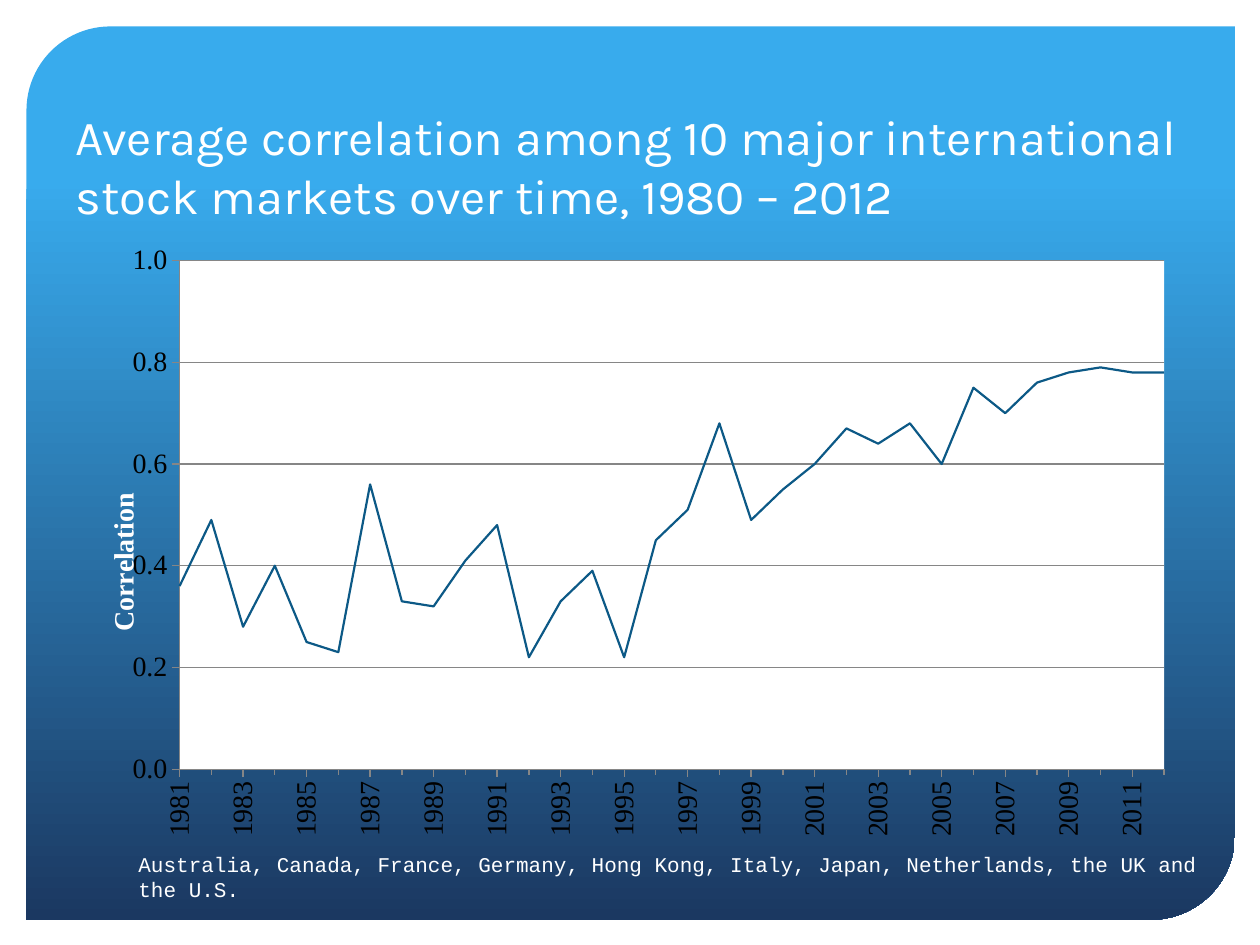
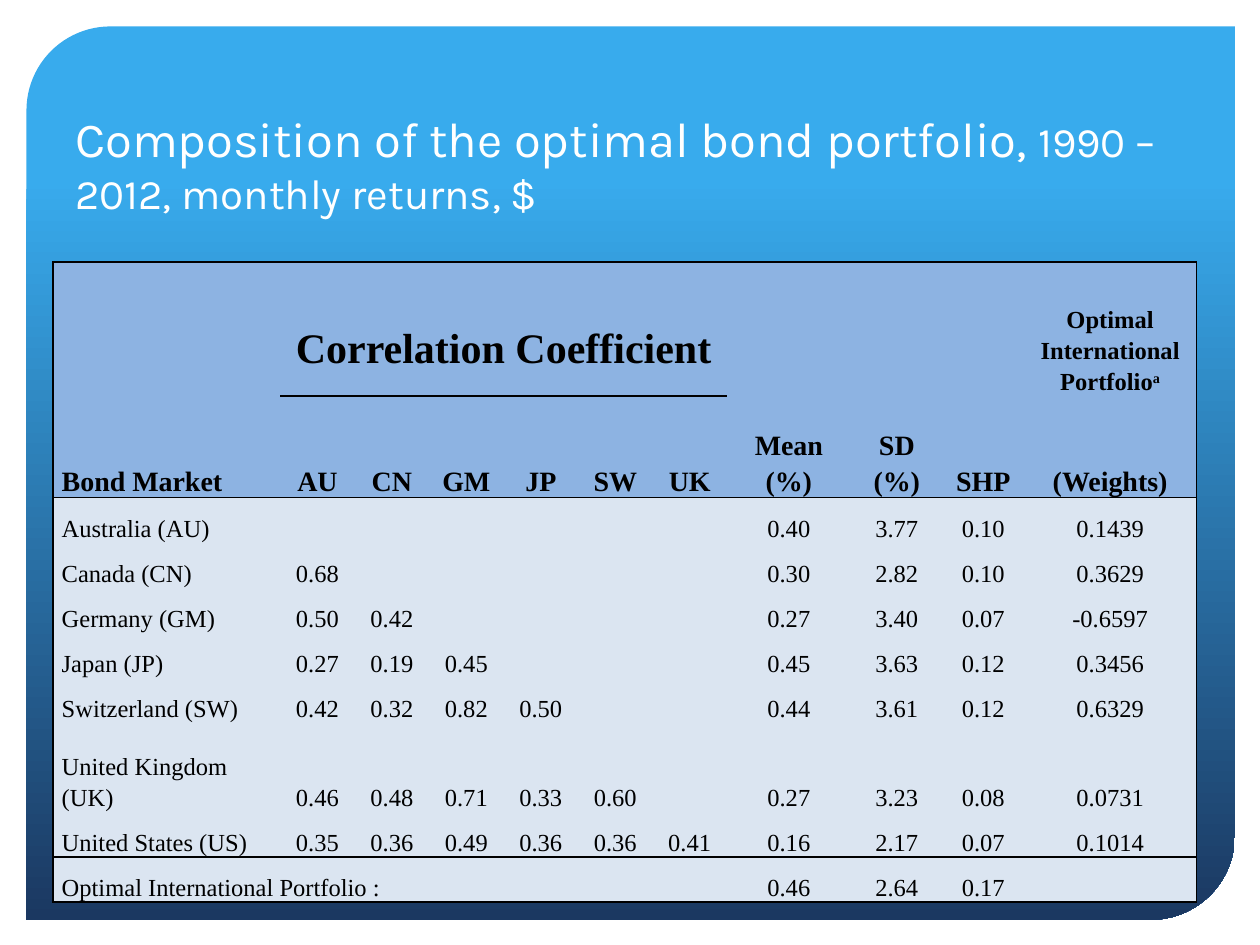
from lxml.etree import SubElement
from pptx import Presentation
from pptx.chart.data import XyChartData
from pptx.dml.color import RGBColor
from pptx.enum.chart import XL_CHART_TYPE, XL_TICK_MARK
from pptx.enum.shapes import MSO_SHAPE
from pptx.enum.text import MSO_ANCHOR, PP_ALIGN
from pptx.oxml.ns import qn
from pptx.util import Inches, Pt

SLIDE_WIDTH, SLIDE_HEIGHT = Inches(10), Inches(7.5)
COLUMNS, ROWS = 100, 75

WHITE, BLACK = "FFFFFF", "000000"
SKY, NAVY = "38ABED", "1B3861"
CURVE, GRID = "0C5986", "868686"
HEADER_FILL, BODY_FILL = "8DB3E2", "DBE5F1"
TITLE_FONT, NOTE_FONT, DATA_FONT = "Karla", "Courier New", "Times New Roman"

FIRST_YEAR, LAST_YEAR = 1981, 2012
CORRELATIONS = [
    0.36, 0.49, 0.28, 0.4, 0.25, 0.23, 0.56, 0.33, 0.32, 0.41, 0.48,
    0.22, 0.33, 0.39, 0.22, 0.45, 0.51, 0.68, 0.49, 0.55, 0.6, 0.67,
    0.64, 0.68, 0.6, 0.75, 0.7, 0.76, 0.78, 0.79, 0.78, 0.78,
]

COLUMN_SHARES = [1.8] + [0.59] * 6 + [0.98, 0.73, 0.64, 1.37]
ROW_SHARES = [1.07, 0.81] + [0.36] * 5 + [0.71, 0.36, 0.36]
COLUMN_HEADS = ["Bond Market", "AU", "CN", "GM", "JP", "SW", "UK",
                "Mean (%)", "SD (%)", "SHP", "(Weights)"]
# Market, correlations with the markets above it, then mean, SD, SHP and weight
MARKETS = [
    ("Australia (AU)", "", "0.40 3.77 0.10 0.1439"),
    ("Canada (CN)", "0.68", "0.30 2.82 0.10 0.3629"),
    ("Germany (GM)", "0.50 0.42", "0.27 3.40 0.07 -0.6597"),
    ("Japan (JP)", "0.27 0.19 0.45", "0.45 3.63 0.12 0.3456"),
    ("Switzerland (SW)", "0.42 0.32 0.82 0.50", "0.44 3.61 0.12 0.6329"),
    ("United Kingdom (UK)", "0.46 0.48 0.71 0.33 0.60", "0.27 3.23 0.08 0.0731"),
    ("United States (US)", "0.35 0.36 0.49 0.36 0.36 0.41", "0.16 2.17 0.07 0.1014"),
    ("Optimal International Portfolio :", "", "0.46 2.64 0.17"),
]


def rgb(color):
    return RGBColor.from_string(color)


def grid_box(column, row, width, height):
    """Turn grid columns and rows into a left, top, width, height box."""
    across, down = SLIDE_WIDTH / COLUMNS, SLIDE_HEIGHT / ROWS
    return [round(n * unit) for n, unit in
            zip((column, row, width, height), (across, down, across, down))]


def style(font, name, size, color, bold=False):
    font.name, font.size, font.bold = name, Pt(size), bold
    font.color.rgb = rgb(color)


def add_backdrop(slide, box):
    panel = slide.shapes.add_shape(MSO_SHAPE.ROUND_2_DIAG_RECTANGLE, *box)
    panel.adjustments[0], panel.adjustments[1] = 0.094, 0
    panel.shadow.inherit = False
    panel.line.fill.background()
    panel.fill.gradient()
    panel.fill.gradient_angle = 270
    for stop, color, position in zip(panel.fill.gradient_stops, (SKY, NAVY), (0.17, 1)):
        stop.color.rgb, stop.position = rgb(color), position


def add_words(slide, box, pieces, font_name, anchor):
    """Add one white paragraph made of (text, size) pieces."""
    frame = slide.shapes.add_textbox(*box).text_frame
    frame.word_wrap, frame.vertical_anchor = True, anchor
    for text, size in pieces:
        run = frame.paragraphs[0].add_run()
        run.text = text
        style(run.font, font_name, size, WHITE)


def start_slide(deck, title_box, title_pieces):
    slide = deck.slides.add_slide(deck.slide_layouts[6])
    add_backdrop(slide, grid_box(2.1, 2.1, 95.9, 70.9))
    add_words(slide, title_box, title_pieces, TITLE_FONT, MSO_ANCHOR.BOTTOM)
    return slide


def set_layout(parent, **settings):
    layout = parent.find(qn("c:layout"))
    if layout is None:
        layout = parent.makeelement(qn("c:layout"))
        parent.insert(0, layout)
    manual = SubElement(layout, qn("c:manualLayout"))
    for key, value in settings.items():
        SubElement(manual, qn(f"c:{key}"), val=str(value))


def turn_upright(body):
    body.set("rot", "-5400000")
    body.set("vert", "horz")


def format_axis(axis, low, high, step, number_format):
    axis.minimum_scale, axis.maximum_scale, axis.major_unit = low, high, step
    axis.major_tick_mark = XL_TICK_MARK.OUTSIDE
    axis.format.line.color.rgb = rgb(GRID)
    axis.tick_labels.number_format = number_format
    axis.tick_labels.number_format_is_linked = False
    style(axis.tick_labels.font, DATA_FONT, 16, BLACK)


def add_correlation_chart(slide, box):
    data = XyChartData()
    series_data = data.add_series("Series 1")
    for year, correlation in enumerate(CORRELATIONS, FIRST_YEAR):
        series_data.add_data_point(year, correlation)
    chart = slide.shapes.add_chart(
        XL_CHART_TYPE.XY_SCATTER_LINES_NO_MARKERS, *box, data).chart
    chart.has_title = chart.has_legend = False
    style(chart.font, DATA_FONT, 16, BLACK)
    chart.plots[0].vary_by_categories = False

    curve = chart.plots[0].series[0]
    curve.smooth = False
    curve.format.line.width = Pt(1.25)
    curve.format.line.color.rgb = rgb(CURVE)

    years, levels = chart.category_axis, chart.value_axis
    format_axis(years, FIRST_YEAR, LAST_YEAR, 2, "0")
    years.has_major_gridlines = False
    years.minor_unit, years.minor_tick_mark = 1, XL_TICK_MARK.OUTSIDE
    turn_upright(years.tick_labels.font._element.getroottree().find(
        f".//{qn('c:valAx')}/{qn('c:txPr')}/{qn('a:bodyPr')}"))
    format_axis(levels, 0, 1, 0.2, "0.0")
    levels.minor_tick_mark = XL_TICK_MARK.NONE
    levels.has_major_gridlines = True
    levels.major_gridlines.format.line.color.rgb = rgb(GRID)

    heading = levels.axis_title.text_frame
    heading.text = "Correlation"
    style(heading.paragraphs[0].runs[0].font, DATA_FONT, 16, WHITE, True)
    turn_upright(heading._txBody.find(qn("a:bodyPr")))
    set_layout(levels.axis_title._element, xMode="edge", yMode="edge", x=0.02, y=0.42)

    plot_area = chart._chartSpace.find(f".//{qn('c:plotArea')}")
    set_layout(plot_area, layoutTarget="inner", xMode="edge", yMode="edge",
               x=0.092, y=0.049, w=0.893, h=0.829)
    backing = SubElement(SubElement(plot_area, qn("c:spPr")), qn("a:solidFill"))
    SubElement(backing, qn("a:srgbClr"), val=WHITE)


def rule_cell(cell, ruled_sides):
    """Draw a black border on the named sides and none on the others."""
    properties = cell._tc.get_or_add_tcPr()
    for side in "LRTB":
        edge = SubElement(properties, qn(f"a:ln{side}"), w=str(Pt(1)))
        if side in ruled_sides:
            SubElement(SubElement(edge, qn("a:solidFill")), qn("a:srgbClr"), val=BLACK)
        else:
            SubElement(edge, qn("a:noFill"))


def ruled_sides(row, column):
    last_row, last_column = len(ROW_SHARES) - 1, len(COLUMN_SHARES) - 1
    under_heading = 1 <= column <= 6
    tests = {
        "L": column == 0,
        "R": column == last_column,
        "T": row in (0, 2, last_row) or (row == 1 and under_heading),
        "B": row in (1, last_row - 1, last_row) or (row == 0 and under_heading),
    }
    return [side for side, ruled in tests.items() if ruled]


def write_cell(cell, text, size, bold=False, align=PP_ALIGN.CENTER):
    cell.text = text
    paragraph = cell.text_frame.paragraphs[0]
    paragraph.alignment, paragraph.line_spacing = align, 1.15
    for run in paragraph.runs:
        style(run.font, DATA_FONT, size, BLACK, bold)
    return paragraph


def add_bond_table(slide, box):
    left, top, width, height = box
    table = slide.shapes.add_table(len(ROW_SHARES), len(COLUMN_SHARES), *box).table
    table.first_row = table.horz_banding = False
    for column, share in zip(table.columns, COLUMN_SHARES):
        column.width = round(width * share / sum(COLUMN_SHARES))
    for row, share in zip(table.rows, ROW_SHARES):
        row.height = round(height * share / sum(ROW_SHARES))

    for r in range(len(ROW_SHARES)):
        for c in range(len(COLUMN_SHARES)):
            cell = table.cell(r, c)
            rule_cell(cell, ruled_sides(r, c))
            cell.fill.solid()
            cell.fill.fore_color.rgb = rgb(HEADER_FILL if r < 2 else BODY_FILL)
            cell.margin_left = cell.margin_right = Inches(0.07)
            cell.margin_top = cell.margin_bottom = 0
            cell.vertical_anchor = MSO_ANCHOR.BOTTOM

    coefficient = table.cell(0, 1)
    coefficient.merge(table.cell(0, 6))
    coefficient.vertical_anchor = MSO_ANCHOR.MIDDLE
    coefficient.margin_top = Inches(0.26)
    write_cell(coefficient, "Correlation Coefficient", 24, True)

    weights = write_cell(table.cell(0, 10), "Optimal International Portfolio", 14, True)
    footnote_mark = weights.add_run()
    footnote_mark.text = "a"
    style(footnote_mark.font, DATA_FONT, 14, BLACK, True)
    footnote_mark._r.get_or_add_rPr().set("baseline", "30000")

    for c, head in enumerate(COLUMN_HEADS):
        write_cell(table.cell(1, c), head, 16, True,
                   PP_ALIGN.CENTER if c else PP_ALIGN.LEFT)

    table.cell(len(ROW_SHARES) - 1, 0).merge(table.cell(len(ROW_SHARES) - 1, 6))
    for r, (market, correlations, results) in enumerate(MARKETS, 2):
        write_cell(table.cell(r, 0), market, 14, align=PP_ALIGN.LEFT)
        for first, figures in ((1, correlations), (7, results)):
            for c, figure in enumerate(figures.split(), first):
                write_cell(table.cell(r, c), figure, 14)


def build_correlation_slide(deck):
    slide = start_slide(deck, grid_box(5, 8.3, 90, 10), [
        ("Average correlation among 10 major international stock markets "
         "over time, 1980 – 2012", 28)])
    add_correlation_chart(slide, grid_box(6.2, 18.3, 87.5, 48.7))
    add_words(slide, grid_box(10, 67.1, 89.2, 3), [
        ("Australia, Canada, France, Germany, Hong Kong, Italy, Japan, "
         "Netherlands, the UK and the U.S.", 12)], NOTE_FONT, MSO_ANCHOR.TOP)


def build_bond_slide(deck):
    slide = start_slide(deck, grid_box(5, 8.3, 90, 9.5), [
        ("Composition of the optimal bond portfolio, ", 28),
        ("1990 – 2012, monthly returns, $", 24)])
    add_bond_table(slide, grid_box(4.2, 20.8, 90.8, 50.8))


def main():
    deck = Presentation()
    deck.slide_width, deck.slide_height = SLIDE_WIDTH, SLIDE_HEIGHT
    build_correlation_slide(deck)
    build_bond_slide(deck)
    deck.save("out.pptx")


if __name__ == "__main__":
    main()
